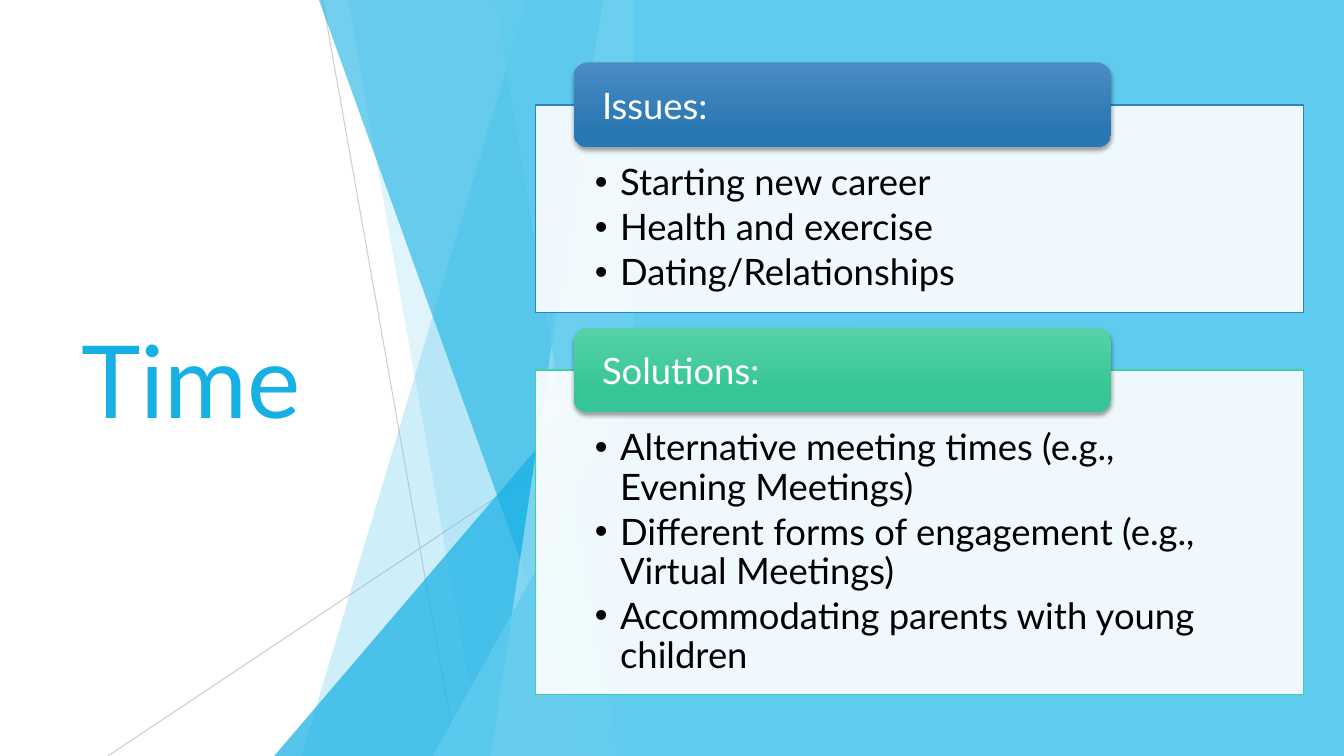
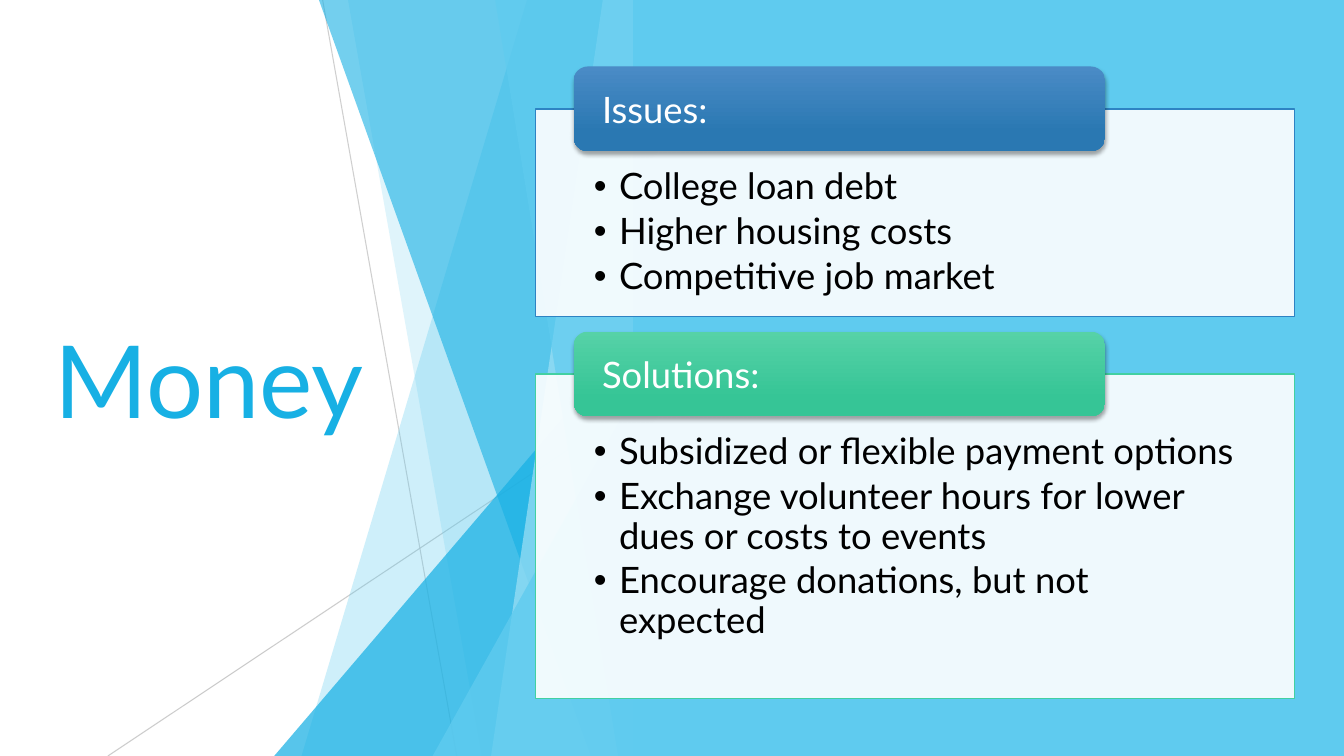
from lxml.etree import SubElement as Sub
from pptx import Presentation
from pptx.dml.color import RGBColor
from pptx.enum.shapes import MSO_CONNECTOR as Conn, MSO_SHAPE as Geo
from pptx.enum.text import MSO_ANCHOR as Anchor, PP_ALIGN as Align
from pptx.oxml.ns import qn
from pptx.util import Pt

# Content: title, title left, top and width of the panels, issues, solutions
SLIDES = [
    ("Time", 71, 104, 762,
     ["Starting new career", "Health and exercise", "Dating/Relationships"],
     ["Alternative meeting times (e.g., Evening Meetings)",
      "Different forms of engagement (e.g., Virtual Meetings)",
      "Accommodating parents with young children"]),
    ("Money", 44, 108, 753,
     ["College loan debt", "Higher housing costs", "Competitive job market"],
     ["Subsidized or flexible payment options",
      "Exchange volunteer hours for lower dues or costs to events",
      "Encourage donations, but not expected"]),
]

# Shared look: lengths in px, 100 to the inch
PX = 9144
WIDE, HIGH = 1333, 750
FONT = "Lato"
WHITE, BLACK, GREY = "FFFFFF", "000000", "BFBFBF"
SKY, BLUE, PALE = "5FCBEF", "17B0E4", "9FE0F5"
EDGE = 628  # where the facets end and the blue side begins
LEFT, GAP, TAB = 531, 57, 84  # panel left, space between panels, tab height

# Heading, panel height, outline, tab gradient
PANELS = [
    ("Issues:", 206, "2E83C3", ("4A8BC6", "2A78B2")),
    ("Solutions:", 322, "42D0A2", ("56D2A7", "36C596")),
]
# Thin lines: from x, from y, to x, to y, opacity
LINES = [(320, 0, 453, HIGH, 75), (EDGE, 403, 107, HIGH, 80)]
# Facets: kind, then top x and bottom x of a band or left and top of a wedge
FACETS = [
    ("band", 523, 299, SKY, 30),
    ("band", 345, 478, SKY, 20),
    ("wedge", 272, 333, BLUE, 72),
    ("band", 316, 586, BLUE, 60),
    ("band", 598, 487, PALE, 70),
    ("band", 491, 613, SKY, 65),
    ("wedge", 429, 393, SKY, 80),
]


def rgb(code):
    return RGBColor.from_string(code)


def fade(shape, pct):
    """Set the opacity of the first colour of a shape."""
    tone = shape.element.spPr.find(".//" + qn("a:srgbClr"))
    Sub(tone, qn("a:alpha"), val=str(pct * 1000))


def paint(shape, fill, pct=100):
    shape.shadow.inherit = False
    shape.line.fill.background()
    shape.fill.solid()
    shape.fill.fore_color.rgb = rgb(fill)
    if pct < 100:
        fade(shape, pct)


def add(slide, geo, x, y, w, h):
    return slide.shapes.add_shape(geo, *(v * PX for v in (x, y, w, h)))


def write(shape, lines, size, color, insets, anchor=Anchor.MIDDLE, bullet=False):
    frame = shape.text_frame
    frame.word_wrap = True
    frame.vertical_anchor = anchor
    (frame.margin_left, frame.margin_top,
     frame.margin_right, frame.margin_bottom) = (v * PX for v in insets)
    for i, line in enumerate(lines):
        para = frame.paragraphs[0] if i == 0 else frame.add_paragraph()
        para.alignment = Align.LEFT
        run = para.add_run()
        run.text = line
        run.font.name, run.font.size = FONT, Pt(size)
        run.font.color.rgb = rgb(color)
        if bullet:
            para.line_spacing, para.space_after = 0.9, Pt(4)
            props = para._p.get_or_add_pPr()
            props.set("marL", str(25 * PX))
            props.set("indent", str(-25 * PX))
            Sub(props, qn("a:buFont"), typeface="Arial")
            Sub(props, qn("a:buChar"), char="•")


def backdrop(slide):
    for x1, y1, x2, y2, pct in LINES:
        line = slide.shapes.add_connector(
            Conn.STRAIGHT, *(v * PX for v in (x1, y1, x2, y2)))
        line.line.width = Pt(0.75)
        line.line.color.rgb = rgb(GREY)
        fade(line, pct)
        Sub(line.element.spPr, qn("a:effectLst"))
    for kind, a, b, color, pct in FACETS:
        if kind == "band":
            path = slide.shapes.build_freeform(a, -1, scale=PX)
            path.add_line_segments([(EDGE, -1), (EDGE, HIGH), (b, HIGH)])
            facet = path.convert_to_shape()
        else:
            facet = add(slide, Geo.ISOSCELES_TRIANGLE, a, b, EDGE - a, HIGH - b)
            facet.adjustments[0] = 1
        paint(facet, color, pct)
    paint(add(slide, Geo.RECTANGLE, EDGE, 0, WIDE - EDGE, HIGH), SKY)


def panel(slide, top, width, high, edge, points):
    box = add(slide, Geo.RECTANGLE, LEFT, top, width, high)
    paint(box, WHITE, 90)
    box.line.color.rgb = rgb(edge)
    box.line.width = Pt(1)
    side = round(width * 0.0775)
    write(box, points, 26, BLACK, (side, 59, side, 20), Anchor.TOP, True)


def tab(slide, top, width, head, tones):
    box = add(slide, Geo.ROUNDED_RECTANGLE, LEFT + round(width * 0.05),
              top - TAB // 2, round(width * 0.7), TAB)
    box.line.fill.background()
    box.fill.gradient()
    box.fill.gradient_angle = 270
    for stop, tone, place in zip(box.fill.gradient_stops, tones, (0, 0.78)):
        stop.color.rgb, stop.position = rgb(tone), place
    # Soft shadow below the tab
    box.shadow.inherit = False
    glow = Sub(box.element.spPr.find(qn("a:effectLst")), qn("a:outerShdw"),
               blurRad=str(Pt(3)), dist=str(Pt(2)), dir="5400000",
               rotWithShape="0")
    tone = Sub(glow, qn("a:srgbClr"), val=BLACK)
    Sub(tone, qn("a:alpha"), val="35000")
    write(box, [head], 26, WHITE, (24, 0, 24, 0))


def main():
    deck = Presentation()
    deck.slide_width, deck.slide_height = WIDE * PX, HIGH * PX
    for title, left, top, width, *lists in SLIDES:
        slide = deck.slides.add_slide(deck.slide_layouts[6])
        backdrop(slide)
        box = slide.shapes.add_textbox(*(v * PX for v in (left, 151, 388, 448)))
        write(box, [title], 72, BLUE, (10, 5, 10, 5))
        for (head, high, edge, tones), points in zip(PANELS, lists):
            panel(slide, top, width, high, edge, points)
            tab(slide, top, width, head, tones)
            top += high + GAP
    deck.save("out.pptx")


if __name__ == "__main__":
    main()
